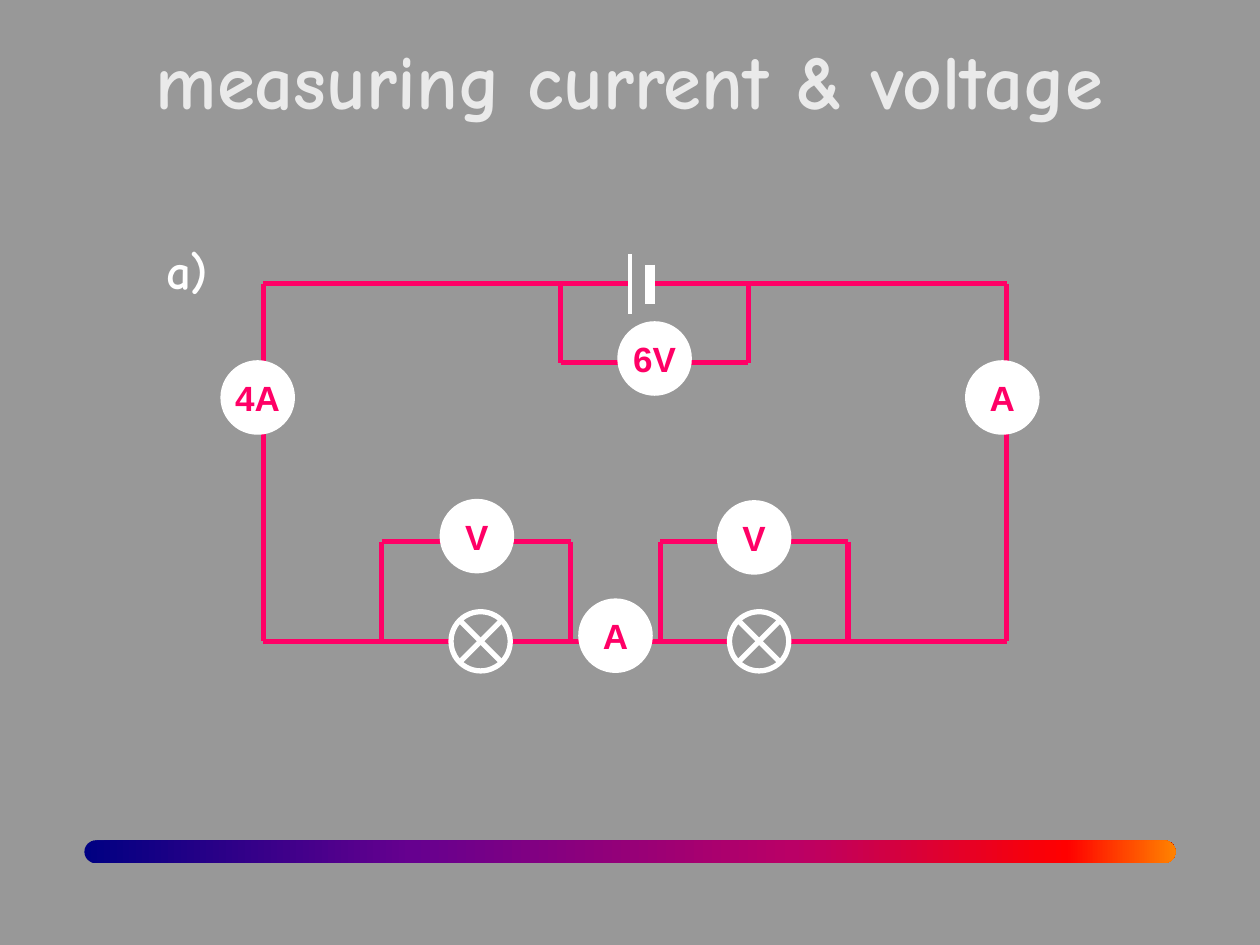
"""Build a slide with a series circuit showing ammeter and voltmeter readings."""
from lxml.etree import SubElement
from pptx import Presentation
from pptx.dml.color import RGBColor
from pptx.enum.shapes import MSO_CONNECTOR, MSO_SHAPE
from pptx.enum.text import MSO_ANCHOR, PP_ALIGN
from pptx.oxml.ns import qn
from pptx.util import Inches, Pt

GREY = RGBColor(0x98, 0x98, 0x98)
PALE = RGBColor(0xEA, 0xEA, 0xEA)
WHITE = RGBColor(0xFF, 0xFF, 0xFF)
PINK = RGBColor(0xFF, 0x00, 0x66)
BAR_STOPS = [
    (0, RGBColor(0x00, 0x00, 0x82)),
    (30, RGBColor(0x66, 0x00, 0x8F)),
    (65, RGBColor(0xBA, 0x00, 0x66)),
    (90, RGBColor(0xFF, 0x00, 0x00)),
    (100, RGBColor(0xFF, 0x82, 0x00)),
]

LEFT, RIGHT, TOP, BOTTOM = 2.09, 7.99, 2.25, 5.09
CELL_LEFT, CELL_RIGHT = 5, 5.16
LAMP_SIZE, METER_SIZE = 0.47, 0.55
LAMP_LEFTS = [3.58, 5.79]
TEXTS = [
    ("measuring current & voltage", (0, 0.21, 10, 0.83), 44, PALE, PP_ALIGN.CENTER),
    ("a)", (1.22, 1.86, 0.71, 0.57), 28, WHITE, PP_ALIGN.LEFT),
]
VOLTMETER_LOOPS = [
    (3.03, 4.53, 4.3, BOTTOM),
    (5.24, 6.73, 4.3, BOTTOM),
    (4.45, 5.94, 2.88, TOP),
]
METERS = [
    ("V", 3.51, 3.98),
    ("V", 5.71, 3.99),
    ("6V", 4.92, 2.57),
    ("4A", 1.77, 2.88),
    ("A", 4.61, 4.77),
    ("A", 7.68, 2.88),
]
CELL_PLATES = [(CELL_LEFT, 2.02, 2.49, 2.25), (CELL_RIGHT, 2.1, 2.41, 6)]


def add_line(slide, start, end, color=PINK, width=3):
    line = slide.shapes.add_connector(
        MSO_CONNECTOR.STRAIGHT, *(Inches(value) for value in (*start, *end)))
    line.line.color.rgb = color
    line.line.width = Pt(width)
    SubElement(line.element.spPr, qn("a:effectLst"))


def add_shape(slide, kind, box):
    shape = slide.shapes.add_shape(kind, *(Inches(value) for value in box))
    shape.shadow.inherit = False
    return shape


def style_text(paragraph, font_name, size, color, alignment):
    paragraph.alignment = alignment
    font = paragraph.runs[0].font
    font.name, font.size, font.bold = font_name, Pt(size), True
    font.color.rgb = color


def add_bar(slide):
    bar = add_shape(slide, MSO_SHAPE.ROUNDED_RECTANGLE, (0.67, 6.67, 8.66, 0.18))
    bar.adjustments[0] = 0.5
    bar.line.fill.background()
    bar.fill.gradient()
    bar.fill.gradient_angle = 0
    stop_list = bar.element.spPr.find(".//" + qn("a:gsLst"))
    for stop in list(stop_list):
        stop_list.remove(stop)
    for position, color in BAR_STOPS:
        stop = SubElement(stop_list, qn("a:gs"), pos=str(position * 1000))
        SubElement(stop, qn("a:srgbClr"), val=str(color))


def add_text(slide, text, box, size, color, alignment):
    text_box = slide.shapes.add_textbox(*(Inches(value) for value in box))
    text_frame = text_box.text_frame
    text_frame.word_wrap = True
    text_frame.text = text
    style_text(text_frame.paragraphs[0], "Comic Neue", size, color, alignment)


def add_wires(slide):
    lamp_gaps = [(left, left + LAMP_SIZE) for left in LAMP_LEFTS]
    for y, gaps in [(TOP, [(CELL_LEFT, CELL_RIGHT)]), (BOTTOM, lamp_gaps)]:
        starts = [LEFT] + [gap[1] for gap in gaps]
        ends = [gap[0] for gap in gaps] + [RIGHT]
        for start, end in zip(starts, ends):
            add_line(slide, (start, y), (end, y))
    for x in (LEFT, RIGHT):
        add_line(slide, (x, TOP), (x, BOTTOM))
    for left, right, level, main_wire in VOLTMETER_LOOPS:
        add_line(slide, (left, level), (right, level))
        for x in (left, right):
            add_line(slide, (x, level), (x, main_wire))


def add_lamp(slide, left):
    box = (left, BOTTOM - LAMP_SIZE / 2, LAMP_SIZE, LAMP_SIZE)
    lamp = add_shape(slide, MSO_SHAPE.FLOWCHART_SUMMING_JUNCTION, box)
    lamp.fill.background()
    lamp.line.color.rgb = WHITE
    lamp.line.width = Pt(3)


def add_meter(slide, label, left, top):
    meter = add_shape(slide, MSO_SHAPE.OVAL, (left, top, METER_SIZE, METER_SIZE))
    meter.fill.solid()
    meter.fill.fore_color.rgb = WHITE
    meter.line.color.rgb = WHITE
    meter.line.width = Pt(3)
    text_frame = meter.text_frame
    text_frame.word_wrap = False
    text_frame.vertical_anchor = MSO_ANCHOR.MIDDLE
    text_frame.text = label
    style_text(text_frame.paragraphs[0], "Arial", 20, PINK, PP_ALIGN.CENTER)


def main():
    presentation = Presentation()
    presentation.slide_width = Inches(10)
    presentation.slide_height = Inches(7.5)
    slide = presentation.slides.add_slide(presentation.slide_layouts[6])
    slide.background.fill.solid()
    slide.background.fill.fore_color.rgb = GREY
    add_bar(slide)
    for text in TEXTS:
        add_text(slide, *text)
    add_wires(slide)
    for x, top, bottom, width in CELL_PLATES:
        add_line(slide, (x, top), (x, bottom), WHITE, width)
    for left in LAMP_LEFTS:
        add_lamp(slide, left)
    for meter in METERS:
        add_meter(slide, *meter)
    presentation.save("out.pptx")


if __name__ == "__main__":
    main()
